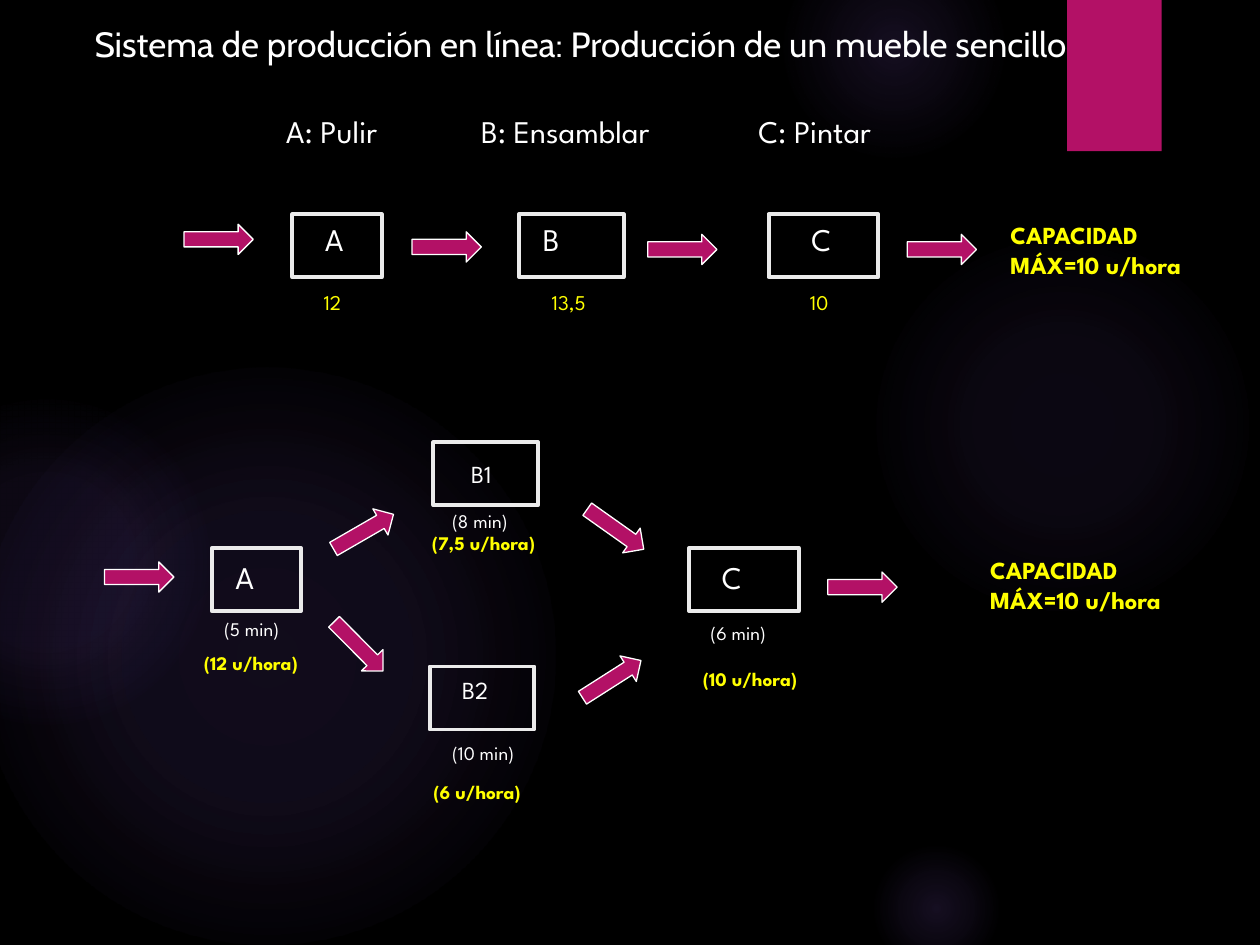
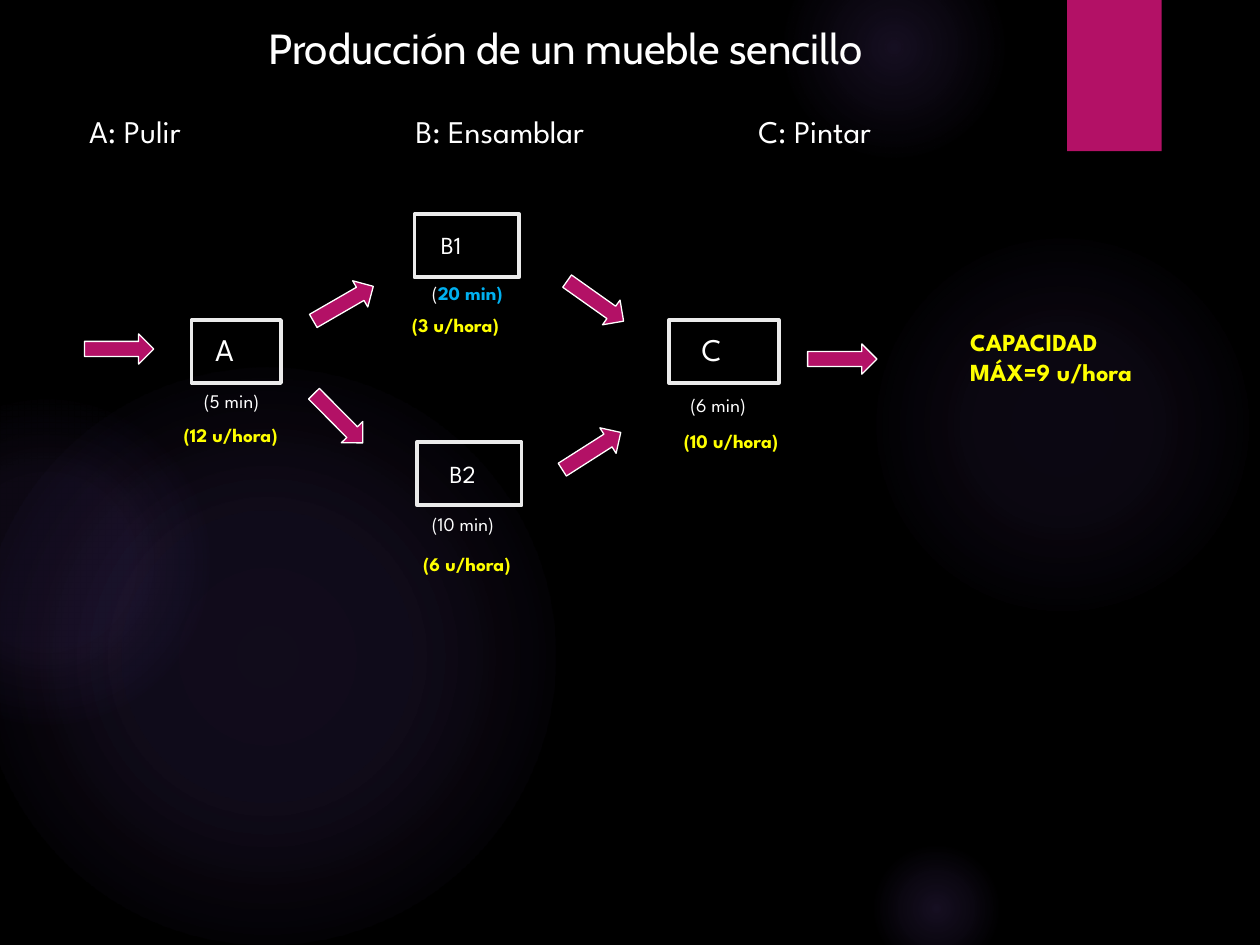
from pptx import Presentation, util as u
from pptx.dml.color import RGBColor
from pptx.enum import shapes, text
from pptx.oxml import parse_xml
from pptx.oxml.ns import nsdecls

BLACK = RGBColor(0x00, 0x00, 0x00)
WHITE = RGBColor(0xFF, 0xFF, 0xFF)
FRAME = RGBColor(0xEB, 0xEB, 0xEB)
MAGENTA = RGBColor(0xB3, 0x11, 0x66)
VIOLET = RGBColor(0x9B, 0x6B, 0xF2)
YELLOW = RGBColor(0xFF, 0xFF, 0x00)
BLUE = RGBColor(0x00, 0xB0, 0xF0)

TITLE_FONT = "Cabin"
BODY_FONT = "League Spartan"

STEP = {"size": 18, "color": WHITE}
SUBSTEP = {"size": 14, "color": WHITE}
MINUTES = {"size": 11, "color": WHITE}
RATE = {"size": 11, "color": YELLOW, "bold": True}
UNITS = {"size": 12, "color": YELLOW}
CAPACITY = {"size": 14, "color": YELLOW, "bold": True}
ALERT = {"size": 11, "color": BLUE, "bold": True}
LINE_HEIGHT = {11: 0.29, 12: 0.3, 14: 0.34, 18: 0.4}

STATION_WIDTH = {"A": 0.71, "B": 0.83, "C": 0.87}
STATION_HEIGHT = 0.5
GLOWS = [
    (6.89, 1.83, 3.08, [(0, 7), (36, 6), (69, 0)]),
    (6.22, -0.5, 1.75, [(0, 14), (36, 7), (73, 0)]),
    (6.89, 6.67, 1.08, [(0, 14), (36, 7), (66, 0)]),
    (-0.17, 2.92, 4.58, [(0, 11), (36, 10), (75, 0)]),
    (-0.92, 3.17, 2.58, [(0, 8), (36, 8), (72, 0)]),
]


class ProductionDeck:
    """Draws production line diagrams in one shared style."""

    def __init__(self):
        self.deck = Presentation()
        self.deck.slide_width, self.deck.slide_height = u.Inches(10), u.Inches(7.5)
        self.layout = self.deck.slide_layouts[5]
        self.slide = None
        backdrop = self.deck.slide_master.background.fill
        backdrop.solid()
        backdrop.fore_color.rgb = BLACK

    def start_slide(self, title, left, top, width, height, size):
        first = self.slide is None
        self.slide = self.deck.slides.add_slide(self.layout)
        if first:
            self.decorate_layout()
        heading = self.slide.shapes.title
        self.place(heading, left, top, width, height)
        self.set_text(heading, [[(title, {"size": size, "color": WHITE, "name": TITLE_FONT})]])

    def decorate_layout(self):
        for footer in list(self.layout.placeholders)[1:]:
            footer.element.getparent().remove(footer.element)
        decorations = [self.glow(*glow) for glow in GLOWS]
        decorations.append(self.shape("RECTANGLE", 8.47, 0, 0.75, 1.2, fill=MAGENTA))
        for position, decoration in enumerate(decorations, start=2):
            self.layout.shapes.element.insert(position, decoration.element)

    def place(self, item, *box):
        for side, length in zip(("left", "top", "width", "height"), box):
            setattr(item, side, u.Inches(length))

    def set_text(self, item, lines, wrap=False):
        frame = item.text_frame
        settings = {"word_wrap": wrap, "auto_size": text.MSO_AUTO_SIZE.SHAPE_TO_FIT_TEXT,
                    "vertical_anchor": text.MSO_ANCHOR.TOP}
        for name, value in settings.items():
            setattr(frame, name, value)
        for number, line in enumerate(lines):
            paragraph = frame.add_paragraph() if number else frame.paragraphs[0]
            paragraph.alignment = text.PP_ALIGN.LEFT
            for words, style in line:
                run = paragraph.add_run()
                run.text = words
                style = {"name": BODY_FONT, **style}
                run.font.color.rgb = style.pop("color")
                style["size"] = u.Pt(style["size"])
                for name, value in style.items():
                    setattr(run.font, name, value)

    def shape(self, kind, left, top, width, height, fill=None, line=None, weight=1):
        item = self.slide.shapes.add_shape(
            shapes.MSO_SHAPE[kind], *map(u.Inches, (left, top, width, height)))
        item.shadow.inherit = False
        if fill is None:
            item.fill.background()
        else:
            item.fill.solid()
            item.fill.fore_color.rgb = fill
        if line is None:
            item.line.fill.background()
        else:
            item.line.color.rgb = line
            item.line.width = u.Pt(weight)
        return item

    def glow(self, left, top, diameter, stops):
        item = self.shape("OVAL", left, top, diameter, diameter, fill=VIOLET)
        colours = "".join(
            f'<a:gs pos="{place * 1000}"><a:srgbClr val="{VIOLET}">'
            f'<a:alpha val="{alpha * 1000}"/></a:srgbClr></a:gs>' for place, alpha in stops)
        gradient = parse_xml(
            f'<a:gradFill {nsdecls("a")}><a:gsLst>{colours}</a:gsLst><a:path path="circle">'
            '<a:fillToRect l="50000" t="50000" r="50000" b="50000"/></a:path></a:gradFill>')
        properties = item.element.spPr
        properties.replace(properties[2], gradient)
        return item

    def label(self, words, left, top, width, style, wrap=False):
        box = self.slide.shapes.add_textbox(
            *map(u.Inches, (left, top, width, LINE_HEIGHT[style["size"]])))
        lines = [[(words, style)]] if isinstance(words, str) else words
        self.set_text(box, lines, wrap)

    def station(self, name, left, top, inset, drop):
        self.shape("RECTANGLE", left, top, STATION_WIDTH[name[0]], STATION_HEIGHT,
                   line=FRAME, weight=2.25)
        style, width = (STEP, 0.39) if len(name) == 1 else (SUBSTEP, 0.62)
        self.label(name, left + inset, top + drop, width, style, wrap=True)

    def arrow(self, left, top, rotation=0):
        item = self.shape("RIGHT_ARROW", left, top, 0.55, 0.24, MAGENTA, WHITE, 0.75)
        item.rotation = rotation

    def capacity(self, units, left, top, width):
        box = self.slide.shapes.add_textbox(*map(u.Inches, (left, top, width, 0.57)))
        self.set_text(box, [[("CAPACIDAD", CAPACITY)], [(f"MÁX={units} u/hora", CAPACITY)]])

    def legend(self, polish, assemble, paint=5.92):
        for words, left, width in (("A: Pulir", polish, 1.01),
                                   ("B: Ensamblar", assemble, 1.75),
                                   ("C: Pintar", paint, 1.23)):
            self.label(words, left, 0.84, width, STEP)

    def split_line(self, dx, dy):
        self.station("A", 1.68 + dx, 4.35 + dy, 0.09, 0.03)
        self.station("C", 5.47 + dx, 4.35 + dy, 0.16, 0.03)
        for left, top, rotation in ((0.83, 4.46, 0), (6.57, 4.54, 0), (2.57, 5.01, 45.2),
                                    (4.58, 5.27, 327.5), (2.61, 4.1, 330), (4.61, 4.08, 35.3)):
            self.arrow(left + dx, top + dy, rotation)
        for words, left, top, width, style in (("(5 min)", 1.68, 4.85, 0.71, MINUTES),
                                               ("(10 min)", 3.49, 5.83, 0.8, MINUTES),
                                               ("(6 min)", 5.54, 4.88, 0.71, MINUTES),
                                               ("(12 u/hora)", 1.52, 5.12, 1.03, RATE)):
            self.label(words, left + dx, top + dy, width, style)


def main():
    show = ProductionDeck()

    show.start_slide("Sistema de producción en línea: Producción de un mueble sencillo",
                     0.65, 0.13, 8.37, 0.44, 20)
    show.legend(2.17, 3.72)
    for name, left, inset in (("A", 2.32, 0.16), ("B", 4.12, 0.09), ("C", 6.1, 0.24)):
        show.station(name, left, 1.7, inset, 0)
    for left, top in ((1.46, 1.78), (3.27, 1.84), (5.14, 1.86), (7.2, 1.86)):
        show.arrow(left, top)
    for units, left, width in (("12", 2.47, 0.4), ("13,5", 4.28, 0.55), ("10", 6.33, 0.4)):
        show.label(units, left, 2.25, width, UNITS)
    show.capacity(10, 7.92, 1.7, 1.7)

    show.split_line(0, 0)
    show.station("B1", 3.44, 3.51, 0.2, 0.08)
    show.station("B2", 3.41, 5.29, 0.16, 0.02)
    show.label("(8 min)", 3.49, 3.99, 0.71, MINUTES)
    show.label("(7,5 u/hora)", 3.33, 4.17, 1.08, RATE)
    show.label("(6 u/hora)", 3.34, 6.14, 0.95, RATE)
    show.label("(10 u/hora)", 5.48, 5.25, 1.04, RATE)
    show.capacity(10, 7.76, 4.36, 1.7)

    show.start_slide("Producción de un mueble sencillo", 2.03, 0.13, 5.15, 0.5, 24)
    show.legend(0.61, 3.2)
    show.split_line(-0.16, -1.81)
    show.station("B1", 3.29, 1.7, 0.11, 0.08)
    show.station("B2", 3.31, 3.51, 0.16, 0.08)
    show.label([[("(", MINUTES), ("20 min)", ALERT)]], 3.33, 2.18, 0.8, MINUTES)
    show.label("(3 u/hora)", 3.17, 2.44, 0.95, RATE)
    show.label("(6 u/hora)", 3.26, 4.33, 0.95, RATE)
    show.label("(10 u/hora)", 5.33, 3.36, 1.04, RATE)
    show.capacity(9, 7.6, 2.55, 1.59)

    show.deck.save("out.pptx")


if __name__ == "__main__":
    main()
